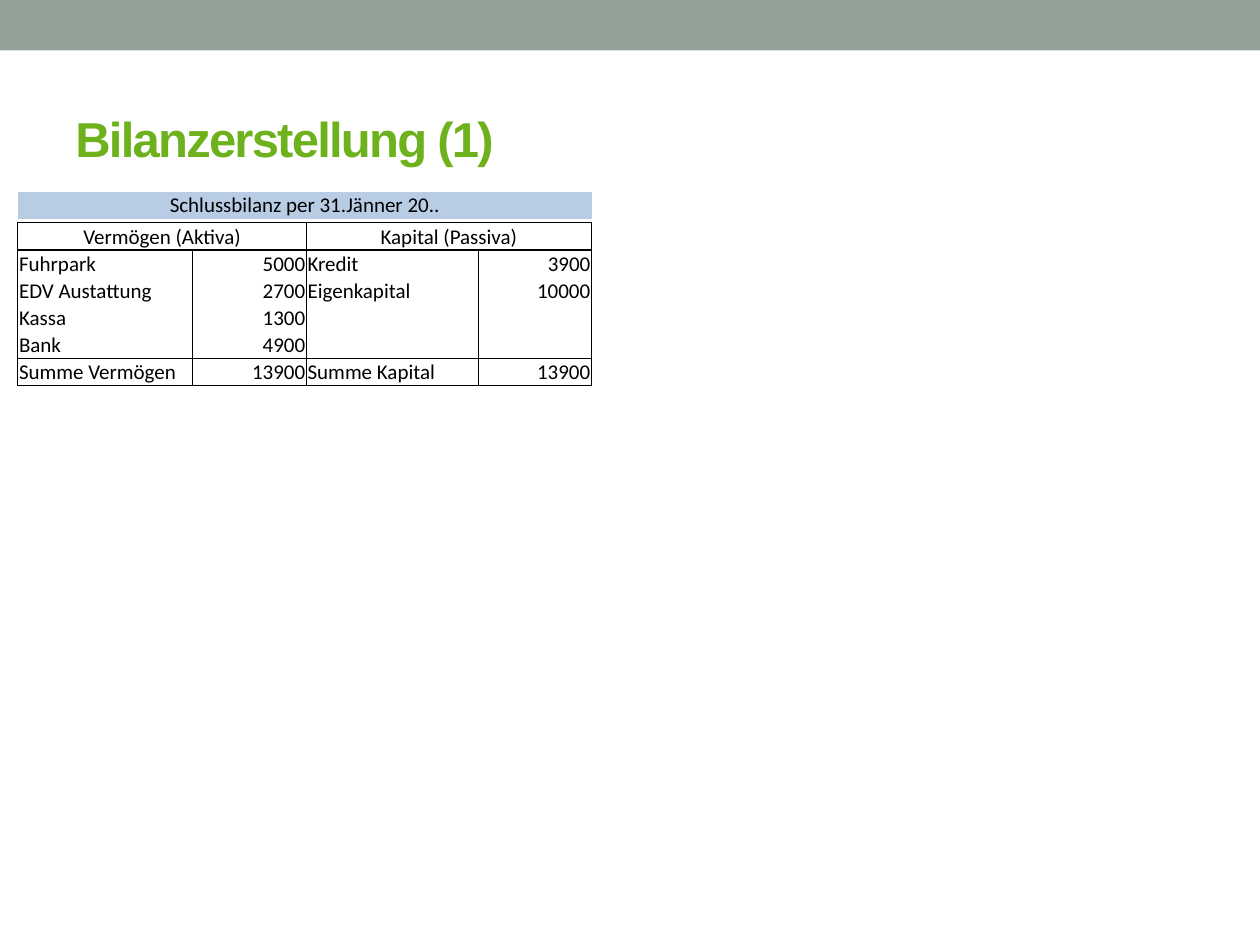
from dataclasses import dataclass

from lxml import etree
from pptx import Presentation
from pptx.dml.color import RGBColor
from pptx.enum.shapes import MSO_SHAPE
from pptx.enum.text import MSO_ANCHOR, PP_ALIGN
from pptx.oxml.ns import qn
from pptx.util import Pt

RECT = MSO_SHAPE.RECTANGLE
MID = MSO_ANCHOR.MIDDLE
LOW = MSO_ANCHOR.BOTTOM
SIDES = {"l": PP_ALIGN.LEFT, "c": PP_ALIGN.CENTER, "r": PP_ALIGN.RIGHT}

BLACK = RGBColor(0x00, 0x00, 0x00)
GREY = RGBColor(0x93, 0xA2, 0x99)
GREEN = RGBColor(0x6D, 0xB2, 0x1C)
BLUE = RGBColor(0xB8, 0xCC, 0xE4)

ROW = 15.4
LEFT, RIGHT = 10.2, 175.1
NAME, SUM = 100, 64.9
DEBT = 98
HEAD, LIST, TOTAL = 127.3, 143, 204.6


@dataclass(frozen=True)
class Grid:
    left: float
    top: float
    cols: tuple[float, ...]
    rows: tuple[tuple[str, ...], ...]
    align: str
    edges: str = "lrtb"
    fill: RGBColor | None = None


GRIDS = (
    Grid(LEFT, 109.5, (328,), (("Schlussbilanz per 31.Jänner 20..",),), "c", "", BLUE),
    Grid(LEFT, HEAD, (NAME + SUM,), (("Vermögen (Aktiva)",),), "c"),
    Grid(LEFT, LIST, (NAME,),
         (("Fuhrpark",), ("EDV Austattung",), ("Kassa",), ("Bank",)), "l"),
    Grid(LEFT + NAME, LIST, (SUM,),
         (("5000",), ("2700",), ("1300",), ("4900",)), "r"),
    Grid(LEFT, TOTAL, (NAME, SUM), (("Summe Vermögen", "13900"),), "lr"),
    Grid(RIGHT, TOTAL, (DEBT, SUM), (("Summe Kapital", "13900"),), "lr"),
    Grid(RIGHT, LIST, (DEBT, SUM), (("Kredit", "3900"),), "lr", "lrt"),
    Grid(RIGHT, LIST + ROW, (DEBT, SUM),
         (("Eigenkapital", "10000"), ("", ""), ("", "")), "lr", "lrb"),
    Grid(RIGHT, HEAD, (DEBT + SUM,), (("Kapital (Passiva)",),), "c"),
)


def add_edge(cell, side: str, shown: bool) -> None:
    props = cell._tc.get_or_add_tcPr()
    line = etree.SubElement(props, qn(f"a:ln{side.upper()}"), w=str(Pt(0.5)))
    if shown:
        fill = etree.SubElement(line, qn("a:solidFill"))
        etree.SubElement(fill, qn("a:srgbClr"), val=str(BLACK))
    else:
        etree.SubElement(line, qn("a:noFill"))


def add_text(para, text: str, face: str, size: float, tint: RGBColor):
    run = para.add_run()
    run.text = text
    run.font.name = face
    run.font.size = Pt(size)
    run.font.color.rgb = tint
    return run


def fill_cell(cell, text: str, align: str, edges: str, fill: RGBColor | None) -> None:
    cell.margin_left = cell.margin_right = cell.margin_top = Pt(0.7)
    cell.margin_bottom = Pt(0)
    cell.vertical_anchor = LOW
    for side in "lrtb":
        add_edge(cell, side, side in edges)
    if fill is None:
        cell.fill.background()
    else:
        cell.fill.solid()
        cell.fill.fore_color.rgb = fill
    para = cell.text_frame.paragraphs[0]
    para.alignment = SIDES[align]
    if text:
        add_text(para, text, "Calibri", 12, BLACK)
    else:
        etree.SubElement(para._p, qn("a:endParaRPr"), sz="1200")


def add_grid(slide, grid: Grid) -> None:
    count = len(grid.rows)
    frame = slide.shapes.add_table(
        count, len(grid.cols), Pt(grid.left), Pt(grid.top),
        Pt(sum(grid.cols)), Pt(ROW * count))
    table = frame.table
    table.first_row = table.horz_banding = False
    for col, width in zip(table.columns, grid.cols):
        col.width = Pt(width)
    for r, texts in enumerate(grid.rows):
        table.rows[r].height = Pt(ROW)
        inner = ("t" if r else "") + ("b" if r < count - 1 else "")
        edges = "".join(e for e in grid.edges if e not in inner)
        for c, text in enumerate(texts):
            fill_cell(table.cell(r, c), text, grid.align[c], edges, grid.fill)


def add_bar(slide) -> None:
    bar = slide.shapes.add_shape(RECT, Pt(0), Pt(0), Pt(720), Pt(28.8))
    bar.shadow.inherit = False
    bar.fill.solid()
    bar.fill.fore_color.rgb = GREY
    bar.line.fill.background()


def add_title(slide) -> None:
    box = slide.shapes.add_textbox(Pt(36), Pt(39.6), Pt(648), Pt(78))
    frame = box.text_frame
    frame.word_wrap = True
    frame.vertical_anchor = MID
    run = add_text(frame.paragraphs[0], "Bilanzerstellung (1)", "Arial", 28, GREEN)
    run.font.bold = True
    run._r.get_or_add_rPr().set("spc", "-100")


def main() -> None:
    deck = Presentation()
    deck.slide_width, deck.slide_height = Pt(720), Pt(540)
    slide = deck.slides.add_slide(deck.slide_layouts[6])
    add_bar(slide)
    add_title(slide)
    for grid in GRIDS:
        add_grid(slide, grid)
    deck.save("out.pptx")


if __name__ == "__main__":
    main()
